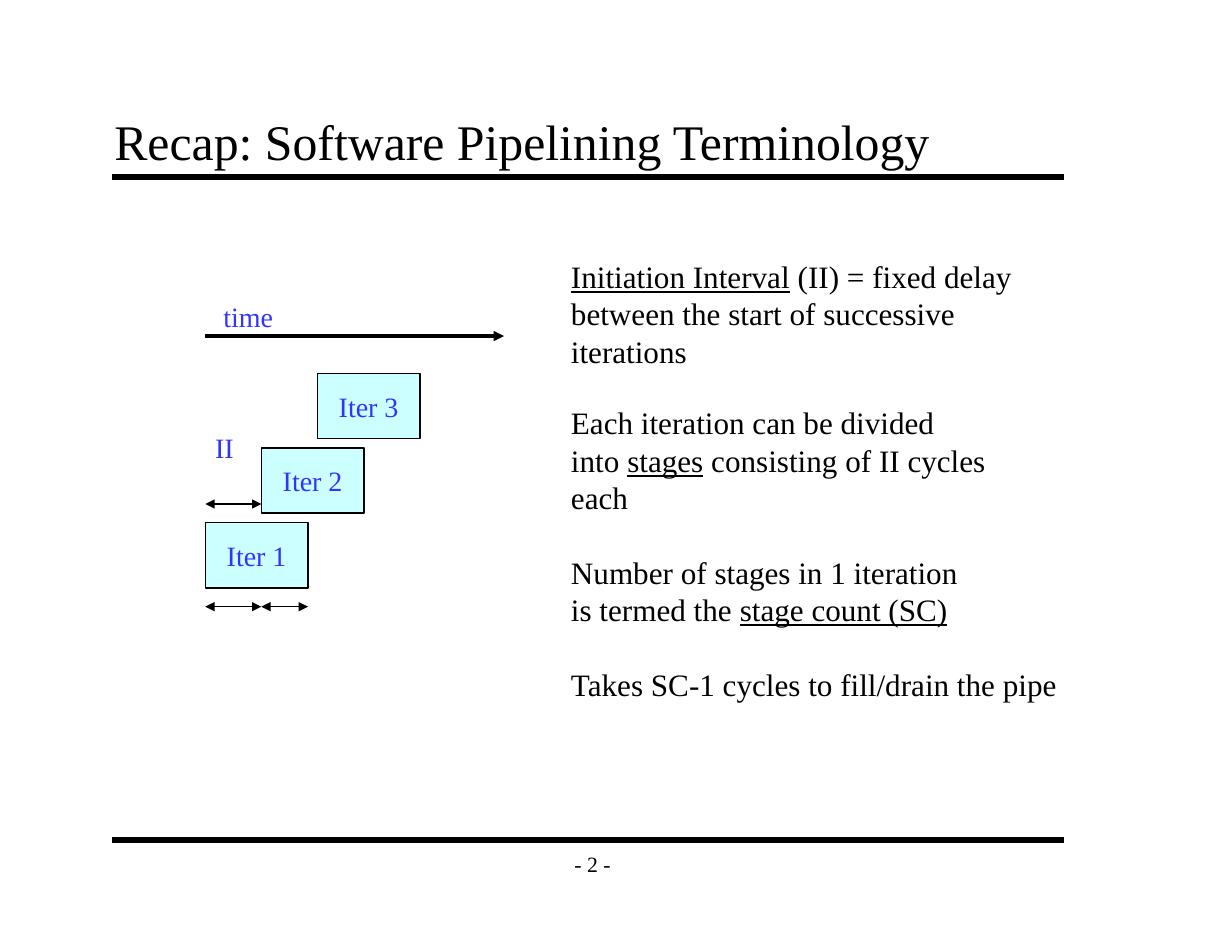
from dataclasses import dataclass

from lxml.etree import SubElement
from pptx import Presentation
from pptx.dml.color import RGBColor
from pptx.enum.shapes import MSO_CONNECTOR, MSO_SHAPE
from pptx.enum.text import MSO_ANCHOR, MSO_AUTO_SIZE, PP_ALIGN
from pptx.oxml.ns import qn
from pptx.util import Pt

EMU_PER_PX = 9525


@dataclass(frozen=True)
class Theme:
    font: str = "Times New Roman"
    ink: RGBColor = RGBColor(0x00, 0x00, 0x00)
    label: RGBColor = RGBColor(0x33, 0x33, 0xFF)
    block: RGBColor = RGBColor(0xCC, 0xFF, 0xFF)
    title_size: int = 32
    body_size: int = 20
    label_size: int = 18
    number_size: int = 14


THEME = Theme()

BODY = [
    (0, [("Initiation Interval", True), (" (II) = fixed delay", False)]),
    (0, [("between the start of successive iterations", False)]),
    (22, [("Each iteration can be divided", False)]),
    (0, [("into ", False), ("stages", True), (" consisting of II cycles", False)]),
    (0, [("each", False)]),
    (24, [("Number of stages in 1 iteration", False)]),
    (0, [("is termed the ", False), ("stage count (SC)", True)]),
    (24, [("Takes SC-1 cycles to fill/drain the pipe", False)]),
]


def px(*lengths):
    return [length * EMU_PER_PX for length in lengths]


def style_paragraph(para, size, color, align=PP_ALIGN.LEFT):
    para.alignment = align
    para.font.name = THEME.font
    para.font.size = Pt(size)
    para.font.color.rgb = color


def set_insets(frame, across, down):
    frame.margin_left = frame.margin_right = across * EMU_PER_PX
    frame.margin_top = frame.margin_bottom = down * EMU_PER_PX


def add_title(page, text):
    title = page.shapes.title
    title.left, title.top, title.width, title.height = px(88, 88, 816, 64)
    frame = title.text_frame
    frame.text = text
    frame.auto_size = MSO_AUTO_SIZE.NONE
    frame.vertical_anchor = MSO_ANCHOR.BOTTOM
    set_insets(frame, 10, 6)
    style_paragraph(frame.paragraphs[0], THEME.title_size, THEME.ink)


def add_line(page, start, end, weight, head=False, tail=False):
    line = page.shapes.add_connector(MSO_CONNECTOR.STRAIGHT, *px(*start, *end))
    line.line.color.rgb = THEME.ink
    line.line.width = Pt(weight)
    outline = line.line._get_or_add_ln()
    for wanted, tag in ((head, "a:headEnd"), (tail, "a:tailEnd")):
        if wanted:
            SubElement(outline, qn(tag), type="triangle")
    SubElement(line._element.spPr, qn("a:effectLst"))


def add_span_arrow(page, left, right, y):
    add_line(page, (left, y), (right, y), 1, head=True, tail=True)


def add_block(page, left, top, width, height, text):
    block = page.shapes.add_shape(
        MSO_SHAPE.RECTANGLE, *px(left, top, width, height)
    )
    block.shadow.inherit = False
    block.fill.solid()
    block.fill.fore_color.rgb = THEME.block
    block.line.color.rgb = THEME.ink
    block.line.width = Pt(1)
    frame = block.text_frame
    frame.text = text
    frame.word_wrap = False
    frame.vertical_anchor = MSO_ANCHOR.MIDDLE
    style_paragraph(
        frame.paragraphs[0], THEME.label_size, THEME.label, PP_ALIGN.CENTER
    )


def add_label(page, left, top, width, height, text):
    box = page.shapes.add_textbox(*px(left, top, width, height))
    frame = box.text_frame
    frame.text = text
    frame.word_wrap = False
    style_paragraph(frame.paragraphs[0], THEME.label_size, THEME.label)


def add_page_number(page, text):
    box = page.shapes.add_textbox(*px(472, 720, 72, 40))
    frame = box.text_frame
    frame.text = text
    frame.word_wrap = False
    frame.vertical_anchor = MSO_ANCHOR.MIDDLE
    set_insets(frame, 10, 6)
    style_paragraph(
        frame.paragraphs[0], THEME.number_size, THEME.ink, PP_ALIGN.CENTER
    )


def add_body(page, lines):
    frame = page.shapes.add_textbox(*px(480, 216, 453, 358)).text_frame
    frame.word_wrap = True
    for index, (gap, spans) in enumerate(lines):
        para = frame.add_paragraph() if index else frame.paragraphs[0]
        style_paragraph(para, THEME.body_size, THEME.ink)
        para.space_before = Pt(gap)
        for text, underlined in spans:
            span = para.add_run()
            span.text = text
            if underlined:
                span.font.underline = True


def add_pipeline(page):
    left, interval, width, height = 176, 48, 88, 56
    first_top, rise = 448, 64
    for index in range(3):
        add_block(
            page, left + index * interval, first_top - index * rise,
            width, height, f"Iter {index + 1}",
        )
    second = left + interval
    add_span_arrow(page, left, second, 432)
    add_span_arrow(page, left, second, 520)
    add_span_arrow(page, second, left + width, 520)
    add_label(page, 175, 364, 36, 38, "II")
    add_line(page, (left, 288), (432, 288), 2.25, tail=True)
    add_label(page, 182, 252, 62, 38, "time")


def main():
    deck = Presentation()
    deck.slide_width, deck.slide_height = px(1056, 816)
    page = deck.slides.add_slide(deck.slide_layouts[5])
    for y in (152, 720):
        add_line(page, (96, y), (912, y), 4)
    add_page_number(page, "- 2 -")
    add_title(page, "Recap: Software Pipelining Terminology")
    add_pipeline(page)
    add_body(page, BODY)
    deck.save("out.pptx")


if __name__ == "__main__":
    main()
